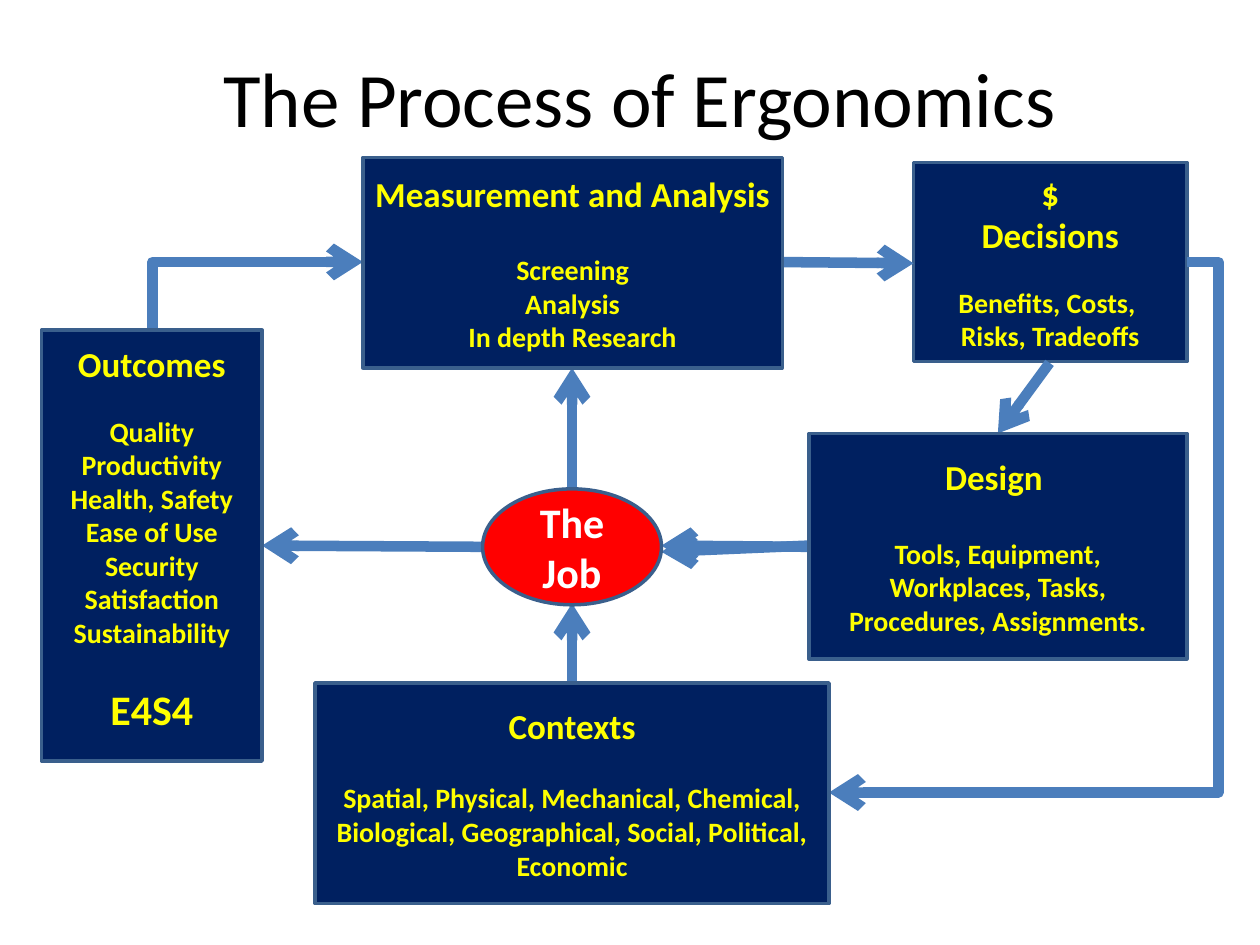
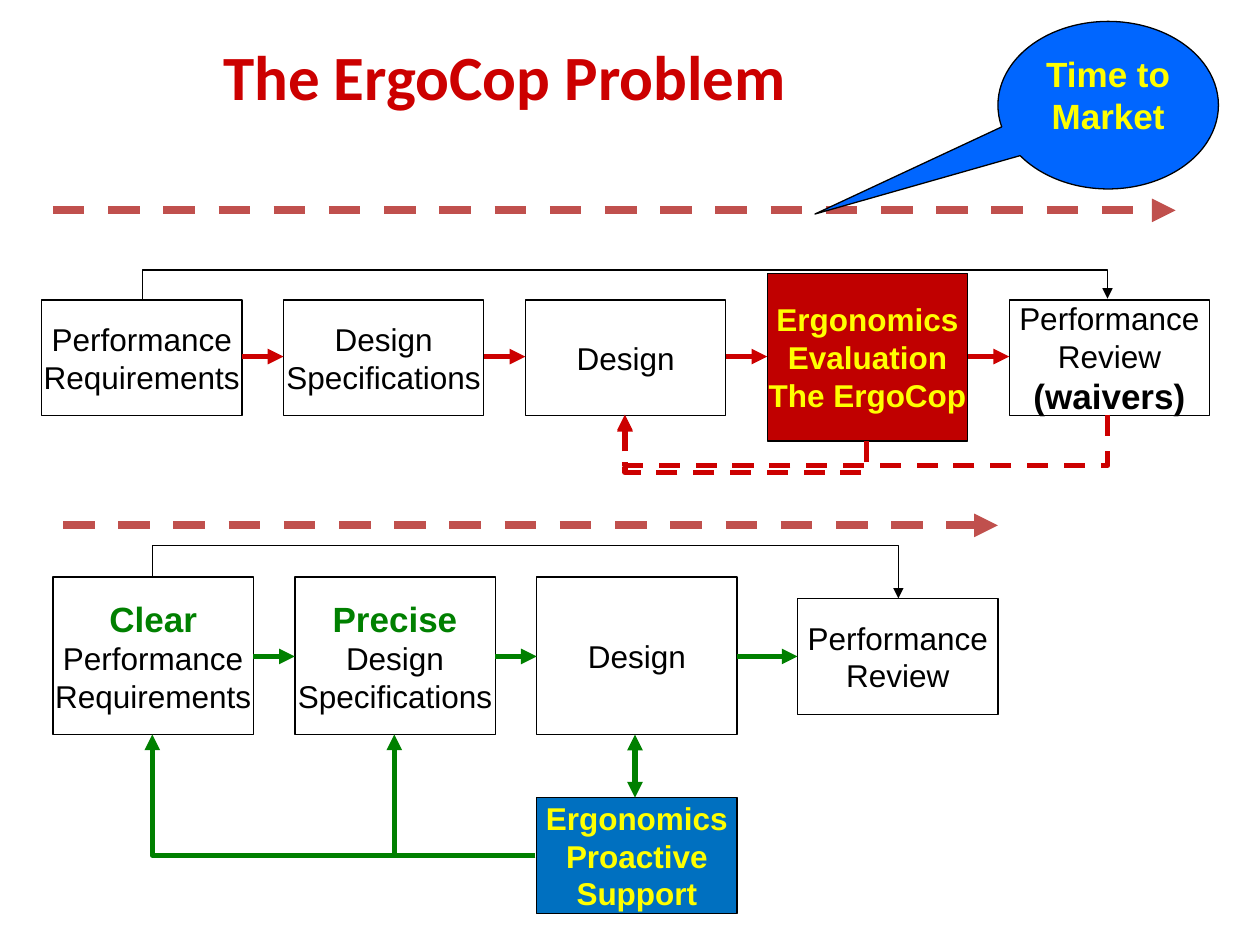
from dataclasses import dataclass, replace
from typing import Optional

from lxml import etree
from pptx import Presentation
from pptx import util as u
from pptx.dml.color import RGBColor
from pptx.enum import dml, shapes, text
from pptx.oxml import ns


@dataclass(frozen=True)
class Theme:
    body_font: str = "Calibri"
    flow_font: str = "Arial"
    black: str = "000000"
    white: str = "FFFFFF"
    yellow: str = "FFFF00"
    navy: str = "002060"
    outline: str = "3A5F8C"
    process_arrow: str = "4B7EBC"
    job: str = "FF0000"
    alert: str = "CC0000"
    cop: str = "C00000"
    timeline: str = "C0504D"
    good: str = "008000"
    support: str = "0070C0"
    callout: str = "0066FF"
    title: float = 44
    subtitle: float = 36
    large: float = 24
    heading: float = 20
    step: float = 18
    detail: float = 16


T = Theme()


@dataclass(frozen=True)
class Line:
    words: str
    size: float
    color: str = T.yellow
    bold: bool = True
    gap: float = 0


@dataclass(frozen=True)
class Box:
    left: float
    top: float
    width: float
    height: float
    lines: list[Line]
    fill: Optional[str] = T.navy
    border: str = T.outline
    border_width: float = 2
    font: str = T.body_font
    shape: shapes.MSO_SHAPE = shapes.MSO_SHAPE.RECTANGLE
    anchor: text.MSO_ANCHOR = text.MSO_ANCHOR.MIDDLE
    wrap: bool = True
    side: float = 0.1
    bottom: float = 0.05


@dataclass(frozen=True)
class Arrow:
    start: tuple[float, float]
    end: tuple[float, float]
    color: str
    width: float
    tip: str = "triangle"
    first: str = ""
    turn: Optional[float] = None
    dashed: bool = False
    both: bool = False


def write(frame, box: Box) -> None:
    frame.word_wrap = box.wrap
    frame.vertical_anchor = box.anchor
    frame.margin_left = frame.margin_right = u.Inches(box.side)
    frame.margin_bottom = u.Inches(box.bottom)
    for index, line in enumerate(box.lines):
        paragraph = frame.paragraphs[0] if index == 0 else frame.add_paragraph()
        paragraph.alignment = text.PP_ALIGN.CENTER
        if line.gap:
            paragraph.space_before = u.Pt(line.gap)
        run = paragraph.add_run()
        run.text = line.words
        run.font.name = box.font
        run.font.size = u.Pt(line.size)
        run.font.bold = line.bold
        run.font.color.rgb = RGBColor.from_string(line.color)


def draw_box(slide, box: Box):
    place = [u.Inches(n) for n in (box.left, box.top, box.width, box.height)]
    if box.fill is None:
        shape = slide.shapes.add_textbox(*place)
    else:
        shape = slide.shapes.add_shape(box.shape, *place)
        shape.shadow.inherit = False
        shape.fill.solid()
        shape.fill.fore_color.rgb = RGBColor.from_string(box.fill)
        shape.line.color.rgb = RGBColor.from_string(box.border)
        shape.line.width = u.Pt(box.border_width)
    write(shape.text_frame, box)
    return shape


def bend(connector, arrow: Arrow) -> None:
    axis = 0 if arrow.first == "h" else 1
    geometry = connector._element.spPr.find(ns.qn("a:prstGeom"))
    if arrow.turn is None:
        geometry.set("prst", "bentConnector2")
    else:
        share = (arrow.turn - arrow.start[axis]) / (arrow.end[axis] - arrow.start[axis])
        guides = geometry.find(ns.qn("a:avLst"))
        if guides is None:
            guides = etree.SubElement(geometry, ns.qn("a:avLst"))
        etree.SubElement(guides, ns.qn("a:gd"), name="adj1", fmla=f"val {round(share * 100000)}")
    if arrow.first == "v":
        connector._element.spPr.find(ns.qn("a:xfrm")).set("rot", "5400000")


def draw_arrow(slide, arrow: Arrow) -> None:
    (x1, y1), (x2, y2) = arrow.start, arrow.end
    kind = shapes.MSO_CONNECTOR.ELBOW if arrow.first else shapes.MSO_CONNECTOR.STRAIGHT
    if arrow.first == "v":
        across, down = y2 - y1, x1 - x2
        mid_x, mid_y = (x1 + x2) / 2, (y1 + y2) / 2
        x1, x2 = mid_x - across / 2, mid_x + across / 2
        y1, y2 = mid_y - down / 2, mid_y + down / 2
    connector = slide.shapes.add_connector(kind, *[u.Inches(n) for n in (x1, y1, x2, y2)])
    if arrow.first:
        bend(connector, arrow)
    connector.line.color.rgb = RGBColor.from_string(arrow.color)
    connector.line.width = u.Pt(arrow.width)
    if arrow.dashed:
        connector.line.dash_style = dml.MSO_LINE.DASH
    stroke = connector.line._get_or_add_ln()
    for end in ("a:headEnd", "a:tailEnd") if arrow.both else ("a:tailEnd",):
        etree.SubElement(stroke, ns.qn(end), type=arrow.tip)
    etree.SubElement(connector._element.spPr, ns.qn("a:effectLst"))


def details(*words: str, gap: float) -> list[Line]:
    return [Line(w, T.detail, gap=0 if i else gap) for i, w in enumerate(words)]


def process_arrow(start, end, first: str = "", turn: Optional[float] = None) -> Arrow:
    return Arrow(start, end, T.process_arrow, 6, "arrow", first, turn)


def build_process(slide) -> None:
    draw_box(slide, Box(0.58, 0.33, 9, 0.87, [
        Line("The Process of Ergonomics", T.title, T.black, False)], fill=None))
    draw_box(slide, Box(7.25, 1.29, 2.17, 1.58, [
        Line("$", T.heading), Line("Decisions", T.heading),
        *details("Benefits, Costs, ", "Risks, Tradeoffs", gap=17)]))
    for arrow in (
        process_arrow((6.42, 4.33), (5.25, 4.38)),
        process_arrow((8.33, 2.88), (7.92, 3.44)),
        process_arrow((4.54, 5.42), (4.54, 4.79)),
        process_arrow((6.21, 2.08), (7.25, 2.09)),
        process_arrow((1.21, 2.62), (2.88, 2.08), "v"),
        process_arrow((4.54, 3.88), (4.54, 2.92)),
        process_arrow((9.42, 2.08), (6.58, 6.29), "h", 9.67),
        process_arrow((6.42, 4.34), (5.25, 4.33)),
        process_arrow((3.83, 4.34), (2.08, 4.33)),
    ):
        draw_arrow(slide, arrow)
    for box in (
        Box(2.88, 1.25, 3.33, 1.67, [
            Line("Measurement and Analysis", T.heading),
            *details("Screening", "Analysis", "In depth Research", gap=22)], side=0.05),
        Box(2.5, 5.42, 4.08, 1.75, [
            Line("Contexts", T.heading),
            *details("Spatial, Physical, Mechanical, Chemical, Biological, Geographical, "
                     "Social, Political, Economic", gap=19.5)]),
        Box(6.42, 3.44, 3, 1.79, [
            Line("Design ", T.heading),
            *details("Tools, Equipment, Workplaces, Tasks, Procedures, Assignments.",
                     gap=22)], side=0.15),
        Box(3.83, 3.88, 1.42, 0.92, [Line("The Job", T.large, T.white)],
            fill=T.job, shape=shapes.MSO_SHAPE.OVAL),
        Box(0.33, 2.62, 1.75, 3.42, [
            Line("Outcomes", T.heading),
            *details("Quality", "Productivity", "Health, Safety", "Ease of Use", "Security",
                     "Satisfaction", "Sustainability", gap=17),
            Line("E4S4", T.large, gap=19.5)], bottom=0.17),
    ):
        draw_box(slide, box)


STEP_WIDTH, STEP_PITCH = 1.59, 1.92


def step(left: float, top: float, height: float, *words: str, lead: str = "",
         close: str = "", fill: str = T.white) -> Box:
    plain = fill == T.white
    color = T.black if plain else T.yellow
    lines = [Line(w, T.step, color, not plain) for w in words]
    if lead:
        lines.insert(0, Line(lead, T.heading, T.good))
    if close:
        lines.append(Line(close, T.heading, T.black))
    return Box(left, top, STEP_WIDTH, height, lines, fill, T.black, 0.75,
               T.flow_font, wrap=False)


def draw_flow(slide, steps: list[Box], level: float, color: str) -> None:
    for box in steps:
        draw_box(slide, box)
    for before, after in zip(steps, steps[1:]):
        draw_arrow(slide, Arrow((before.left + STEP_WIDTH, level), (after.left, level), color, 3))


def build_ergocop(slide) -> None:
    draw_box(slide, Box(0.92, 0.25, 6.17, 1.25, [
        Line("The ErgoCop Problem", T.subtitle, T.alert)], fill=None,
        anchor=text.MSO_ANCHOR.TOP))
    timeline = Arrow((0.42, 1.67), (9.33, 1.67), T.timeline, 4.5, dashed=True)
    draw_arrow(slide, timeline)
    draw_arrow(slide, replace(timeline, start=(0.5, 4.17), end=(7.92, 4.17)))
    market = draw_box(slide, Box(
        7.92, 0.17, 1.75, 1.33,
        [Line("Time to", T.heading), Line("Market", T.heading)],
        T.callout, T.black, 0.75, T.flow_font,
        shapes.MSO_SHAPE.OVAL_CALLOUT, text.MSO_ANCHOR.TOP))
    market.adjustments[0], market.adjustments[1] = -1.33, 0.65

    late = [0.33 + STEP_PITCH * i for i in range(5)]
    draw_flow(slide, [
        step(late[0], 2.38, 0.92, "Performance", "Requirements"),
        step(late[1], 2.38, 0.92, "Design", "Specifications"),
        step(late[2], 2.38, 0.92, "Design"),
        step(late[3], 2.17, 1.33, "Ergonomics", "Evaluation", "The ErgoCop", fill=T.cop),
        step(late[4], 2.38, 0.92, "Performance", "Review", close="(waivers)"),
    ], 2.83, T.alert)

    early = [0.42 + STEP_PITCH * i for i in range(3)]
    draw_flow(slide, [
        step(early[0], 4.58, 1.25, "Performance", "Requirements", lead="Clear"),
        step(early[1], 4.58, 1.25, "Design", "Specifications", lead="Precise"),
        step(early[2], 4.58, 1.25, "Design"),
        step(6.33, 4.75, 0.92, "Performance", "Review"),
    ], 5.21, T.good)
    draw_box(slide, step(early[2], 6.33, 0.92, "Ergonomics", "Proactive", "Support",
                         fill=T.support))

    rework = Arrow((6.88, 3.5), (4.96, 3.29), T.alert, 3, first="v", turn=3.75, dashed=True)
    review = Arrow((1.21, 4.58), (7.13, 4.75), T.black, 0.75, first="v", turn=4.33)
    support = Arrow((4.25, 6.79), (3.13, 5.83), T.good, 3, first="h")
    for arrow in (
        Arrow((5.04, 6.33), (5.04, 5.83), T.good, 3, both=True),
        rework,
        replace(rework, start=(8.79, 3.29), end=(4.96, 3.3), turn=3.7),
        review,
        replace(review, start=(1.13, 2.38), end=(8.79, 2.37), turn=2.14),
        support,
        replace(support, end=(1.21, 5.83)),
    ):
        draw_arrow(slide, arrow)


def main() -> None:
    deck = Presentation()
    deck.slide_width, deck.slide_height = u.Inches(10), u.Inches(7.5)
    for build in (build_process, build_ergocop):
        build(deck.slides.add_slide(deck.slide_layouts[6]))
    deck.save("out.pptx")


if __name__ == "__main__":
    main()
